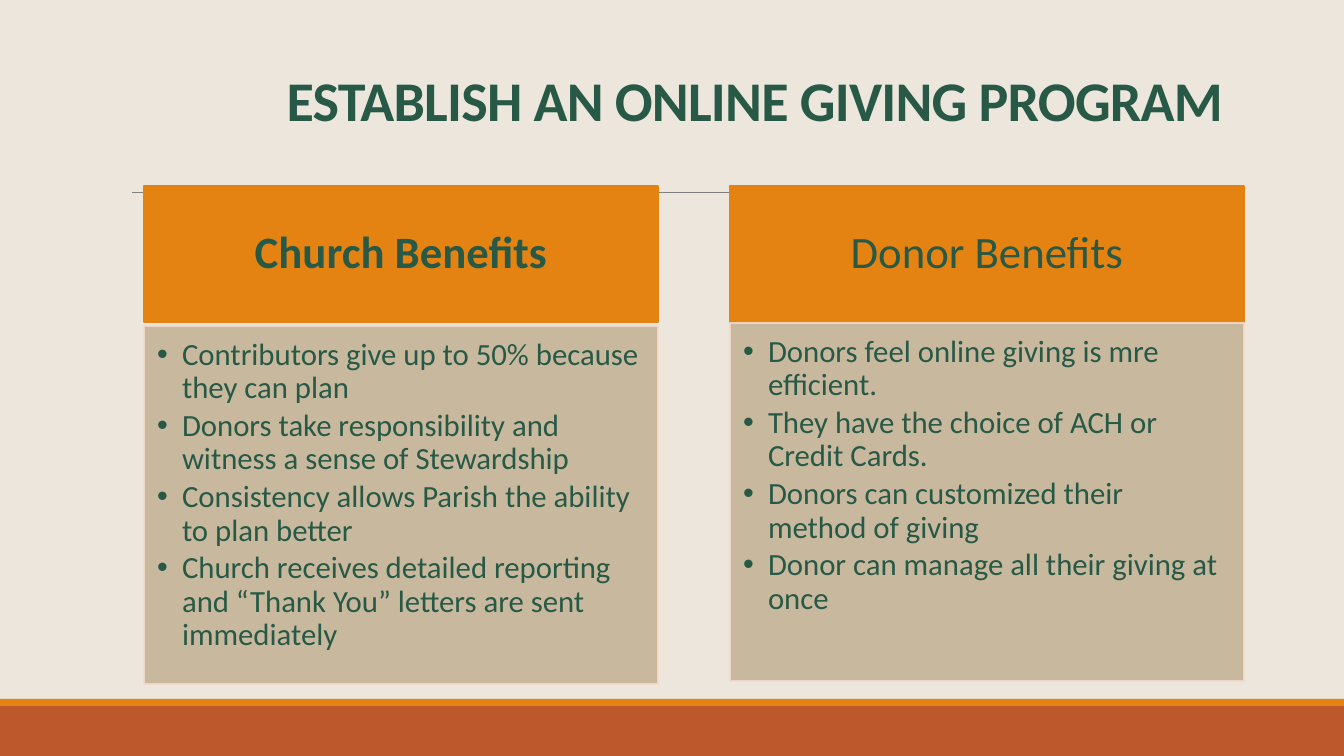
"""Build the slide comparing church and donor benefits of online giving."""
from lxml.etree import SubElement
from pptx import Presentation
from pptx.dml.color import RGBColor
from pptx.enum.shapes import MSO_CONNECTOR, MSO_SHAPE
from pptx.enum.text import MSO_ANCHOR, MSO_AUTO_SIZE, PP_ALIGN
from pptx.oxml.ns import qn
from pptx.util import Pt

EMU_PER_PX = 914400 / 100.8
SLIDE_WIDTH, SLIDE_HEIGHT = 1344, 756


def px(length):
    return round(length * EMU_PER_PX)


def rgb(value):
    return RGBColor.from_string(value)


class BenefitsSlide:
    FONT = "Calibri"
    GREEN, ORANGE, RUST, TAN = "275946", "E48312", "BD582C", "C5B598"
    CREAM, BLUSH, GREY = "ECE6DD", "F5D9CC", "808080"

    def __init__(self, deck):
        self.slide = deck.slides.add_slide(deck.slide_layouts[4])
        self.slide.background.fill.solid()
        self.slide.background.fill.fore_color.rgb = rgb(self.CREAM)

    def send_to_back(self, shape):
        self.slide.shapes._spTree.insert(2, shape._element)

    def band(self, top, height, color):
        band = self.slide.shapes.add_shape(
            MSO_SHAPE.RECTANGLE, 0, px(top), px(SLIDE_WIDTH), px(height))
        band.shadow.inherit = False
        band.fill.solid()
        band.fill.fore_color.rgb = rgb(color)
        band.line.fill.background()
        self.send_to_back(band)

    def rule(self, left, right, y):
        rule = self.slide.shapes.add_connector(
            MSO_CONNECTOR.STRAIGHT, px(left), px(y), px(right), px(y))
        rule.line.color.rgb = rgb(self.GREY)
        rule.line.width = Pt(0.5)
        SubElement(rule._element.spPr, qn("a:effectLst"))
        self.send_to_back(rule)

    def place(self, index, box, lines, size, bold, anchor, align, spacing):
        holder = self.slide.placeholders[index]
        holder.left, holder.top, holder.width, holder.height = map(px, box)
        frame = holder.text_frame
        frame.text = "\n".join(lines)
        frame.word_wrap = True
        frame.auto_size = MSO_AUTO_SIZE.NONE
        frame.vertical_anchor = anchor
        for paragraph in frame.paragraphs:
            paragraph.alignment = align
            paragraph.line_spacing = spacing
            paragraph.space_before = paragraph.space_after = Pt(0)
            for run in paragraph.runs:
                run.font.name = self.FONT
                run.font.size = Pt(size)
                run.font.bold = bold
                run.font.color.rgb = rgb(self.GREEN)
        return holder

    def paint(self, holder, fill, outline, opacity=100):
        holder.fill.solid()
        holder.fill.fore_color.rgb = rgb(fill)
        holder.line.color.rgb = rgb(outline)
        holder.line.width = Pt(1.25)
        if opacity < 100:
            for color in holder._element.spPr.iter(qn("a:srgbClr")):
                SubElement(color, qn("a:alpha"), val=str(opacity * 1000))

    def inset(self, holder, left, top, right, bottom):
        frame = holder.text_frame
        frame.margin_left, frame.margin_top = px(left), px(top)
        frame.margin_right, frame.margin_bottom = px(right), px(bottom)

    def title(self, text, box):
        title = self.place(0, box, [text], 40, True, MSO_ANCHOR.BOTTOM,
                           PP_ALIGN.RIGHT, 0.85)
        for run in title.text_frame.paragraphs[0].runs:
            run.font._element.set("spc", "-50")

    def heading(self, index, text, box, bold):
        heading = self.place(index, box, [text], 32, bold, MSO_ANCHOR.MIDDLE,
                             PP_ALIGN.CENTER, 0.9)
        self.inset(heading, 25, 14, 25, 14)
        self.paint(heading, self.ORANGE, self.ORANGE)

    def bullets(self, index, benefits, box):
        panel = self.place(index, box, benefits, 22, False, MSO_ANCHOR.TOP,
                           PP_ALIGN.LEFT, 0.9)
        self.inset(panel, 13, 13, 17, 19)
        self.paint(panel, self.TAN, self.BLUSH, 90)
        for paragraph in panel.text_frame.paragraphs:
            paragraph.space_after = Pt(3.3)
            properties = paragraph._p.get_or_add_pPr()
            properties.set("marL", str(px(25)))
            properties.set("indent", str(px(-25)))


def main():
    deck = Presentation()
    deck.slide_width, deck.slide_height = px(SLIDE_WIDTH), px(SLIDE_HEIGHT)
    giving = BenefitsSlide(deck)
    giving.rule(132, 1231, 192)
    giving.band(699, 7, giving.ORANGE)
    giving.band(706, 50, giving.RUST)
    giving.title("ESTABLISH AN ONLINE GIVING PROGRAM", (150, 12, 1083, 126))

    columns = [
        ("Church Benefits", True, 144, 326, [
            "Contributors give up to 50% because they can plan",
            "Donors take responsibility and witness a sense of Stewardship",
            "Consistency allows Parish the ability to plan better",
            "Church receives detailed reporting and “Thank You” letters "
            "are sent immediately",
        ]),
        ("Donor Benefits", False, 730, 323, [
            "Donors feel online giving is mre efficient.",
            "They have the choice of ACH or Credit Cards.",
            "Donors can customized their method of giving",
            "Donor can manage all their giving at once",
        ]),
    ]
    for column, (name, bold, left, panel_top, benefits) in enumerate(columns):
        index = 1 + 2 * column
        giving.heading(index, name, (left, 186, 514, 136), bold)
        giving.bullets(index + 1, benefits, (left, panel_top, 514, 358))
    deck.save("out.pptx")


if __name__ == "__main__":
    main()
